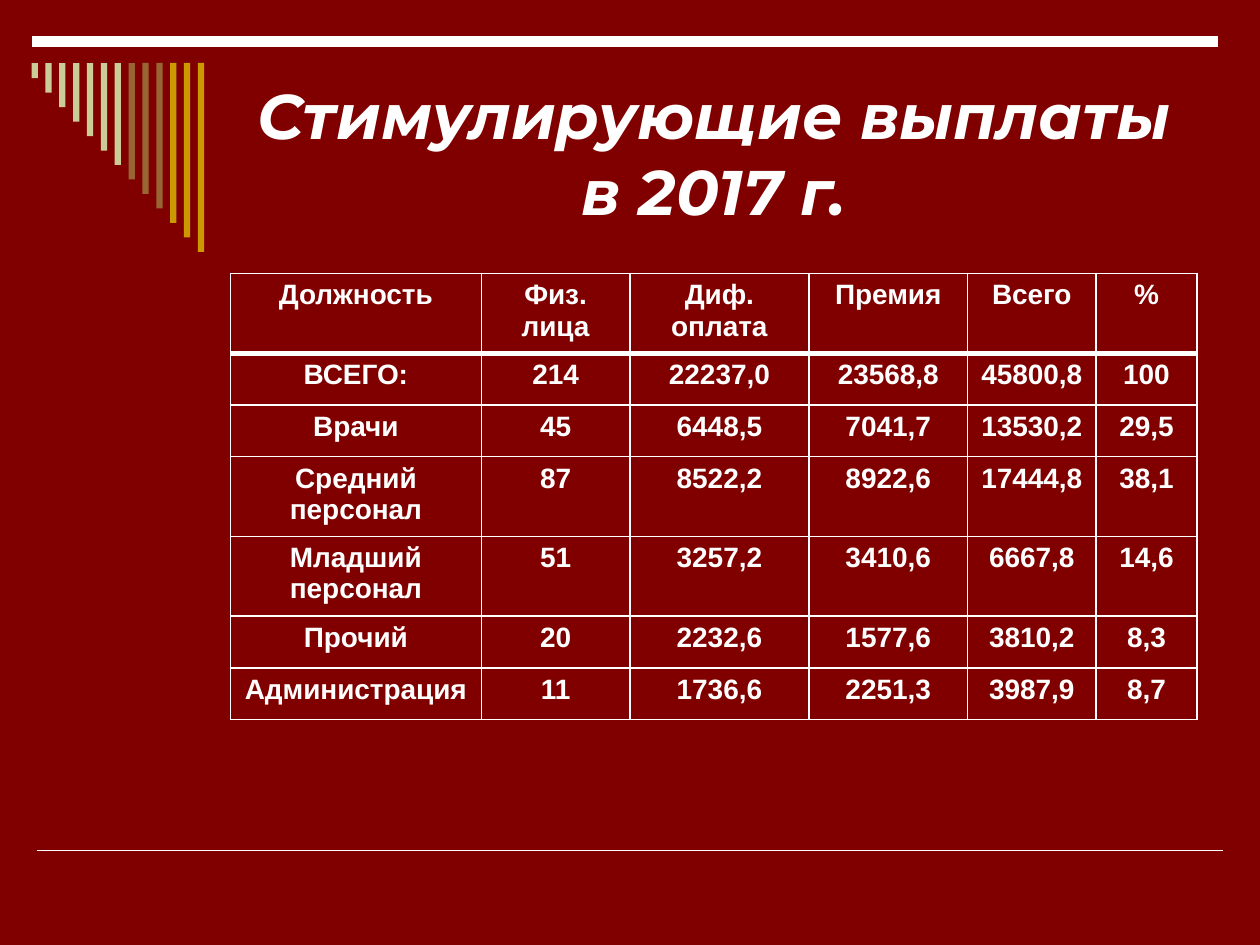
from dataclasses import dataclass

from lxml import etree
from pptx import Presentation
from pptx.dml.color import RGBColor
from pptx.enum.shapes import MSO_CONNECTOR, MSO_SHAPE
from pptx.enum.text import MSO_ANCHOR, PP_ALIGN
from pptx.oxml.ns import qn
from pptx.util import Inches, Pt

CENTER = PP_ALIGN.CENTER
MIDDLE = MSO_ANCHOR.MIDDLE
RECT = MSO_SHAPE.RECTANGLE
STRAIGHT = MSO_CONNECTOR.STRAIGHT

MAROON, WHITE = "800000", "FFFFFF"
BAR_COLORS = ["CCCC99"] * 7 + ["996633"] * 3 + ["CC9900"] * 3
BAR_LEFT, BAR_TOP, BAR_WIDTH, BAR_PITCH = 0.25, 0.5, 0.05, 0.11
BAR_MIN, BAR_MAX = 0.12, 1.5

COL_WIDTHS = [1.99, 1.18, 1.42, 1.26, 1.02, 0.8]
ROW_HEIGHTS = [0.63, 0.41, 0.41, 0.63, 0.63, 0.41, 0.41]
ROWS = [
    ["Должность", "Физ.\nлица", "Диф.\nоплата", "Премия", "Всего", "%"],
    ["ВСЕГО:", "214", "22237,0", "23568,8", "45800,8", "100"],
    ["Врачи", "45", "6448,5", "7041,7", "13530,2", "29,5"],
    ["Средний персонал", "87", "8522,2", "8922,6", "17444,8", "38,1"],
    ["Младший персонал", "51", "3257,2", "3410,6", "6667,8", "14,6"],
    ["Прочий", "20", "2232,6", "1577,6", "3810,2", "8,3"],
    ["Администрация", "11", "1736,6", "2251,3", "3987,9", "8,7"],
]


@dataclass
class Rule:
    left: float
    right: float
    y: float
    weight: float


@dataclass
class Style:
    font: str
    size: float
    italic: bool = False


RULES = [Rule(0.29, 9.71, 6.75, 1), Rule(0.25, 9.67, 0.33, 6)]
TITLE = Style("Montserrat", 36, italic=True)
CELL = Style("Arial", 16)


def rgb(color: str) -> RGBColor:
    return RGBColor.from_string(color)


def add_run(p, text: str, style: Style) -> None:
    r = p.add_run()
    r.text = text
    r.font.name = style.font
    r.font.size = Pt(style.size)
    r.font.bold = True
    r.font.italic = style.italic
    r.font.color.rgb = rgb(WHITE)


def add_rule(s, rule: Rule) -> None:
    line = s.shapes.add_connector(
        STRAIGHT, Inches(rule.left), Inches(rule.y), Inches(rule.right), Inches(rule.y)
    )
    line.line.color.rgb = rgb(WHITE)
    line.line.width = Pt(rule.weight)
    etree.SubElement(line._element.spPr, qn("a:effectLst"))


def add_bars(s) -> None:
    """Draw the hanging bars, each longer than the one before by an equal step."""
    step = (BAR_MAX - BAR_MIN) / (len(BAR_COLORS) - 1)
    for i, color in enumerate(BAR_COLORS):
        sp = s.shapes.add_shape(
            RECT, Inches(BAR_LEFT + i * BAR_PITCH), Inches(BAR_TOP),
            Inches(BAR_WIDTH), Inches(BAR_MIN + i * step),
        )
        sp.shadow.inherit = False
        sp.fill.solid()
        sp.fill.fore_color.rgb = rgb(color)
        sp.line.fill.background()


def add_title(s) -> None:
    box = s.shapes.add_textbox(Inches(1.83), Inches(0.5), Inches(7.67), Inches(1.42))
    tf = box.text_frame
    tf.word_wrap = True
    tf.vertical_anchor = MIDDLE
    p = tf.paragraphs[0]
    p.alignment = CENTER
    add_run(p, "Стимулирующие выплаты", TITLE)
    p.add_line_break()
    add_run(p, "в 2017 г.", TITLE)


def set_borders(cell, top: float, bottom: float) -> None:
    tcPr = cell._tc.get_or_add_tcPr()
    weights = {"a:lnL": 1, "a:lnR": 1, "a:lnT": top, "a:lnB": bottom}
    for i, (tag, weight) in enumerate(weights.items()):
        ln = etree.Element(qn(tag), w=str(Pt(weight)))
        fill = etree.SubElement(ln, qn("a:solidFill"))
        etree.SubElement(fill, qn("a:srgbClr"), val=WHITE)
        tcPr.insert(i, ln)


def fill_cell(cell, text: str, row: int) -> None:
    cell.fill.solid()
    cell.fill.fore_color.rgb = rgb(MAROON)
    set_borders(cell, top=3 if row == 1 else 1, bottom=3 if row == 0 else 1)
    tf = cell.text_frame
    for i, line in enumerate(text.split("\n")):
        p = tf.add_paragraph() if i else tf.paragraphs[0]
        p.alignment = CENTER
        add_run(p, line, CELL)


def add_payments_table(s) -> None:
    table = s.shapes.add_table(
        len(ROWS), len(COL_WIDTHS), Inches(1.83), Inches(2.17),
        Inches(sum(COL_WIDTHS)), Inches(sum(ROW_HEIGHTS)),
    ).table
    table.first_row = False
    table.horz_banding = False
    for col, width in zip(table.columns, COL_WIDTHS):
        col.width = Inches(width)
    for i, (height, texts) in enumerate(zip(ROW_HEIGHTS, ROWS)):
        table.rows[i].height = Inches(height)
        for j, text in enumerate(texts):
            fill_cell(table.cell(i, j), text, i)


def main() -> None:
    prs = Presentation()
    prs.slide_width, prs.slide_height = Inches(10), Inches(7.5)
    s = prs.slides.add_slide(prs.slide_layouts[6])
    s.background.fill.solid()
    s.background.fill.fore_color.rgb = rgb(MAROON)
    for rule in RULES:
        add_rule(s, rule)
    add_bars(s)
    add_title(s)
    add_payments_table(s)
    prs.save("out.pptx")


if __name__ == "__main__":
    main()
